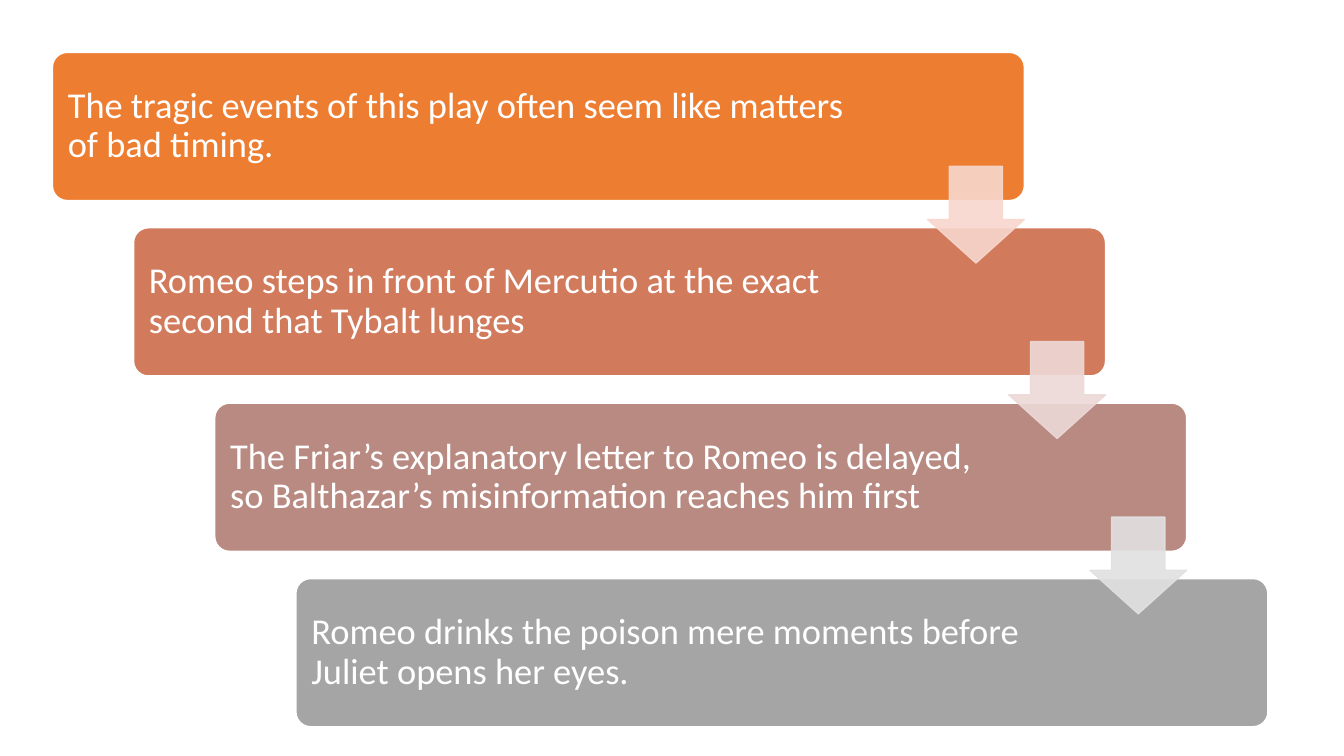
from lxml import etree
from pptx import Presentation
from pptx.dml.color import RGBColor
from pptx.enum.shapes import MSO_SHAPE as SHAPE
from pptx.enum.text import MSO_ANCHOR, PP_ALIGN
from pptx.oxml.ns import qn
from pptx.util import Inches, Pt

# Text, step colour, right text inset
STEPS = [
    ("The tragic events of this play often seem like matters of bad timing.",
     "ED7D31", 1.74),
    ("Romeo steps in front of Mercutio at the exact second that Tybalt lunges",
     "D17B5C", 1.87),
    ("The Friar’s explanatory letter to Romeo is delayed, "
     "so Balthazar’s misinformation reaches him first",
     "B98A82", 1.87),
    ("Romeo drinks the poison mere moments before Juliet opens her eyes.",
     "A5A5A5", 1.87),
]
ARROW_COLORS = ["F8D7CE", "EDD9D7", "E1E1E1"]

LEFT, TOP = 0.52, 0.52
STEP_WIDTH, STEP_HEIGHT = 9.64, 1.47
SHIFT_X, SHIFT_Y = 0.805, 1.74
ARROW_SIZE = 0.96
ARROW_LEFT, ARROW_TOP = 9.2, 1.65
INSET = 0.11


def rgb(color):
    return RGBColor.from_string(color)


def add_block(slide, kind, left, top, width, height, adjustments, fill, line):
    block = slide.shapes.add_shape(
        kind, Inches(left), Inches(top), Inches(width), Inches(height))
    block.shadow.inherit = False
    for index, value in enumerate(adjustments):
        block.adjustments[index] = value
    block.fill.solid()
    block.fill.fore_color.rgb = rgb(fill)
    block.line.color.rgb = rgb(line)
    block.line.width = Pt(1)
    return block


def set_opacity(block, percent):
    """Make both the fill and the outline partly transparent."""
    for color in block.element.spPr.iter(qn("a:srgbClr")):
        etree.SubElement(color, qn("a:alpha"), val=str(percent * 1000))


def add_step(slide, index, text, color, right_inset):
    step = add_block(slide, SHAPE.ROUNDED_RECTANGLE,
                     LEFT + index * SHIFT_X, TOP + index * SHIFT_Y,
                     STEP_WIDTH, STEP_HEIGHT, [0.1], color, "FFFFFF")
    frame = step.text_frame
    frame.word_wrap = True
    frame.vertical_anchor = MSO_ANCHOR.MIDDLE
    frame.margin_left = frame.margin_top = frame.margin_bottom = Inches(INSET)
    frame.margin_right = Inches(right_inset)
    frame.text = text
    paragraph = frame.paragraphs[0]
    paragraph.alignment = PP_ALIGN.LEFT
    paragraph.line_spacing = 0.9
    font = paragraph.runs[0].font
    font.name = "Calibri"
    font.size = Pt(26)
    font.color.rgb = rgb("FFFFFF")


def add_arrow(slide, index, color):
    arrow = add_block(slide, SHAPE.DOWN_ARROW,
                      ARROW_LEFT + index * SHIFT_X,
                      ARROW_TOP + index * SHIFT_Y,
                      ARROW_SIZE, ARROW_SIZE, [0.55, 0.45], color, color)
    set_opacity(arrow, 90)


def main():
    deck = Presentation()
    deck.slide_width = Inches(13.33)
    deck.slide_height = Inches(7.5)
    slide = deck.slides.add_slide(deck.slide_layouts[6])
    for index, (text, color, right_inset) in enumerate(STEPS):
        add_step(slide, index, text, color, right_inset)
    for index, color in enumerate(ARROW_COLORS):
        add_arrow(slide, index, color)
    deck.save("out.pptx")


if __name__ == "__main__":
    main()
